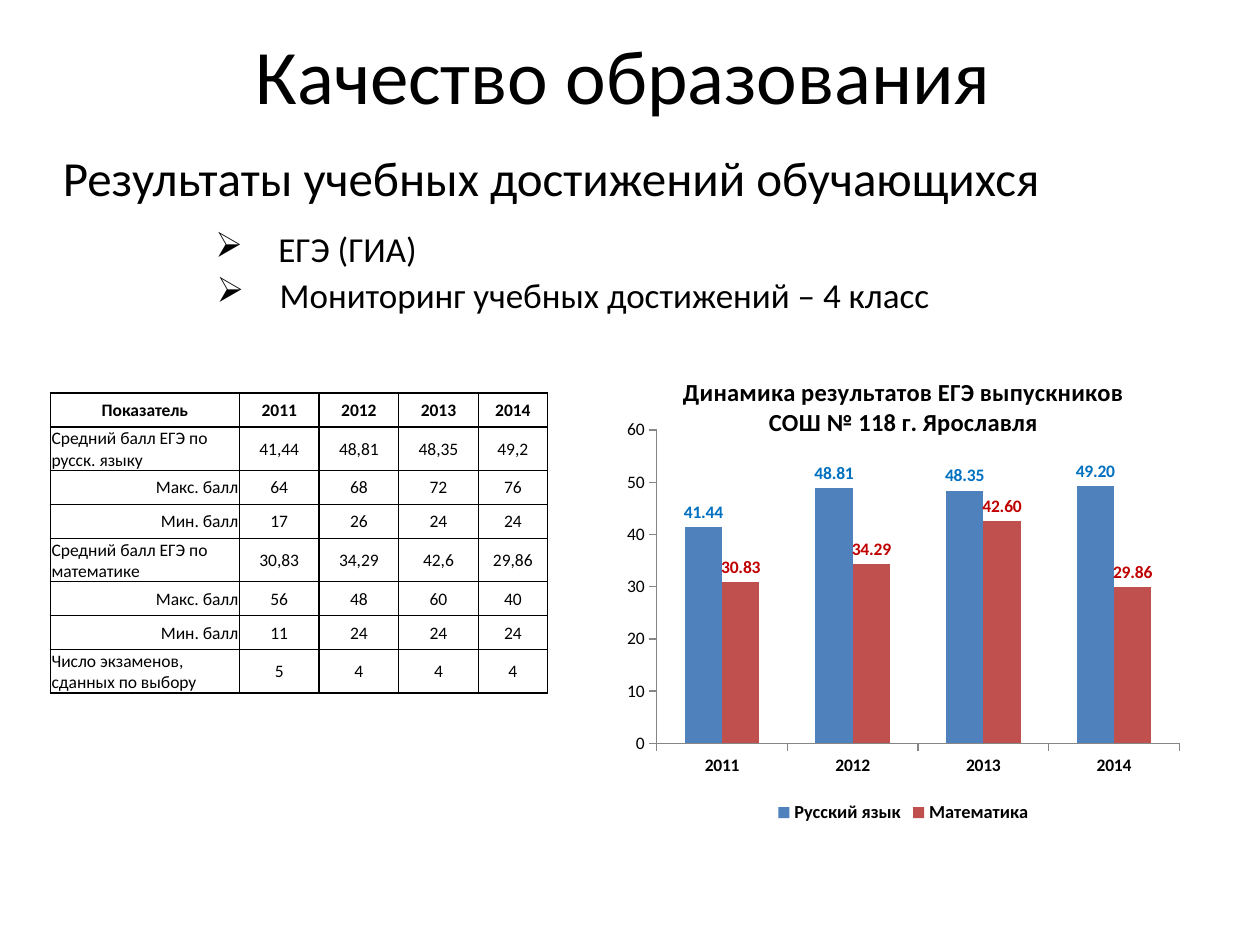
from dataclasses import dataclass

from lxml import etree
from pptx import Presentation
from pptx import util as u
from pptx.chart import data as chart_data
from pptx.dml.color import RGBColor
from pptx.enum import chart as charts, text
from pptx.oxml import ns

Pt = u.Pt


@dataclass(frozen=True)
class Theme:
    font: str = "Calibri"
    ink: str = "000000"
    axis: str = "868686"
    bars: tuple = ("4F81BD", "C0504D")
    labels: tuple = ("0070C0", "C00000")
    title: float = 44
    subtitle: float = 28
    bullet: float = 20
    small: float = 10
    legend: float = 10.5
    chart_title: float = 14


THEME = Theme()
LEFT, CENTER, RIGHT = text.PP_ALIGN.LEFT, text.PP_ALIGN.CENTER, text.PP_ALIGN.RIGHT
YEARS = ("2011", "2012", "2013", "2014")
SCORES = {
    "Русский язык": (41.44, 48.81, 48.35, 49.2),
    "Математика": (30.83, 34.29, 42.6, 29.86),
}
ROWS = (
    ("Показатель", *YEARS),
    ("Средний балл ЕГЭ по русск. языку", "41,44", "48,81", "48,35", "49,2"),
    ("Макс. балл", "64", "68", "72", "76"),
    ("Мин. балл", "17", "26", "24", "24"),
    ("Средний балл ЕГЭ по математике", "30,83", "34,29", "42,6", "29,86"),
    ("Макс. балл", "56", "48", "60", "40"),
    ("Мин. балл", "11", "24", "24", "24"),
    ("Число экзаменов, сданных по выбору", "5", "4", "4", "4"),
)


def style_font(font, size, bold=False, color=THEME.ink):
    font.name = THEME.font
    font.size = Pt(size)
    font.bold = bold
    font.color.rgb = RGBColor.from_string(color)


def write(frame, words, size, bold=False, align=LEFT, bullet=None):
    frame.word_wrap = True
    para = frame.paragraphs[0]
    para.alignment = align
    span = para.add_run()
    span.text = words
    style_font(span.font, size, bold)
    if bullet:
        props = para._p.get_or_add_pPr()
        props.set("marL", str(Pt(36)))
        props.set("indent", str(-Pt(36)))
        etree.SubElement(props, ns.qn("a:buChar"), char=bullet)


def add_line_of_text(page, box, words, size, **style):
    frame = page.shapes.add_textbox(*map(Pt, box)).text_frame
    frame.vertical_anchor = text.MSO_ANCHOR.MIDDLE
    write(frame, words, size, **style)


def add_heading(page, box):
    left, top, width, height = box
    add_line_of_text(page, (left + 3.6, top, width, 67), "Качество образования",
                     THEME.title, align=CENTER)
    add_line_of_text(page, (left, top + 67, width, height - 67),
                     "Результаты учебных достижений обучающихся", THEME.subtitle)


def add_bullets(page, box):
    left, top, width, height = box
    for index, words in enumerate(("ЕГЭ (ГИА)", "Мониторинг учебных достижений – 4 класс")):
        add_line_of_text(page, (left + 0.7 * index, top + 26 * index, width, height - 26),
                         words, THEME.bullet, bullet="➢")


def add_borders(cell):
    props = cell._tc.get_or_add_tcPr()
    for index, side in enumerate(("lnL", "lnR", "lnT", "lnB")):
        line = etree.Element(ns.qn(f"a:{side}"), w=str(Pt(1)))
        fill = etree.SubElement(line, ns.qn("a:solidFill"))
        etree.SubElement(fill, ns.qn("a:srgbClr"), val=THEME.ink)
        props.insert(index, line)


def add_score_table(page, box):
    widths = (108, 45.5, 45.5, 45.5, 39.5)
    table = page.shapes.add_table(len(ROWS), len(widths), *map(Pt, box)).table
    table.horz_banding = False
    for column, width in zip(table.columns, widths):
        column.width = Pt(width)
    for row_index, values in enumerate(ROWS):
        table.rows[row_index].height = Pt(box[3] / len(ROWS))
        for column_index, value in enumerate(values):
            cell = table.cell(row_index, column_index)
            cell.fill.background()
            cell.vertical_anchor = text.MSO_ANCHOR.MIDDLE
            cell.margin_left = cell.margin_right = cell.margin_top = Pt(0.7)
            cell.margin_bottom = 0
            align = CENTER
            if row_index and not column_index:
                align = RIGHT if value.endswith("балл") else LEFT
            write(cell.text_frame, value, THEME.small, bold=row_index == 0, align=align)
            add_borders(cell)


def place_plot(chart, left, top, width, height):
    area = chart._chartSpace.chart.plotArea
    for old in area.findall(ns.qn("c:layout")):
        area.remove(old)
    layout = etree.Element(ns.qn("c:layout"))
    manual = etree.SubElement(layout, ns.qn("c:manualLayout"))
    settings = dict(layoutTarget="inner", xMode="edge", yMode="edge",
                    x=left, y=top, w=width, h=height)
    for name, value in settings.items():
        etree.SubElement(manual, ns.qn(f"c:{name}"), val=str(value))
    area.insert(0, layout)


def style_axis(axis, bold=False):
    axis.has_major_gridlines = False
    axis.major_tick_mark = charts.XL_TICK_MARK.OUTSIDE
    axis.minor_tick_mark = charts.XL_TICK_MARK.NONE
    axis.format.line.color.rgb = RGBColor.from_string(THEME.axis)
    axis.format.line.width = Pt(0.75)
    style_font(axis.tick_labels.font, THEME.small, bold)


def add_score_chart(page, box):
    data = chart_data.CategoryChartData(number_format="#,##0.00")
    data.categories = YEARS
    for name, values in SCORES.items():
        data.add_series(name, values)
    chart = page.shapes.add_chart(charts.XL_CHART_TYPE.COLUMN_CLUSTERED,
                                  *map(Pt, box), data).chart
    style_font(chart.font, THEME.small)
    chart.has_title = True
    write(chart.chart_title.text_frame,
          "Динамика результатов ЕГЭ выпускников СОШ № 118 г. Ярославля",
          THEME.chart_title, bold=True, align=CENTER)
    chart.has_legend = True
    chart.legend.position = charts.XL_LEGEND_POSITION.BOTTOM
    chart.legend.include_in_layout = False
    style_font(chart.legend.font, THEME.legend, bold=True)
    style_axis(chart.category_axis, bold=True)
    style_axis(chart.value_axis)
    chart.value_axis.minimum_scale = 0
    chart.value_axis.maximum_scale = 60
    chart.value_axis.major_unit = 10
    chart.value_axis.tick_labels.number_format = "0"
    chart.value_axis.tick_labels.number_format_is_linked = False
    plot = chart.plots[0]
    plot.gap_width = 150
    plot.overlap = 0
    plot.vary_by_categories = False
    for series, bar_color, label_color in zip(plot.series, THEME.bars, THEME.labels):
        series.format.fill.solid()
        series.format.fill.fore_color.rgb = RGBColor.from_string(bar_color)
        labels = series.data_labels
        labels.show_value = True
        labels.position = charts.XL_LABEL_POSITION.OUTSIDE_END
        labels.number_format = "#,##0.00"
        labels.number_format_is_linked = False
        style_font(labels.font, THEME.small, True, label_color)
    place_plot(chart, 0.08, 0.16, 0.89, 0.66)


def main():
    deck = Presentation()
    deck.slide_width, deck.slide_height = Pt(720), Pt(540)
    page = deck.slides.add_slide(deck.slide_layouts[6])
    add_heading(page, (28.8, 8.6, 648, 118))
    add_bullets(page, (116, 116.6, 563, 77))
    add_score_table(page, (28.8, 224.6, 284, 155.5))
    add_score_chart(page, (348.5, 202.3, 335.5, 271.4))
    deck.save("out.pptx")


if __name__ == "__main__":
    main()
